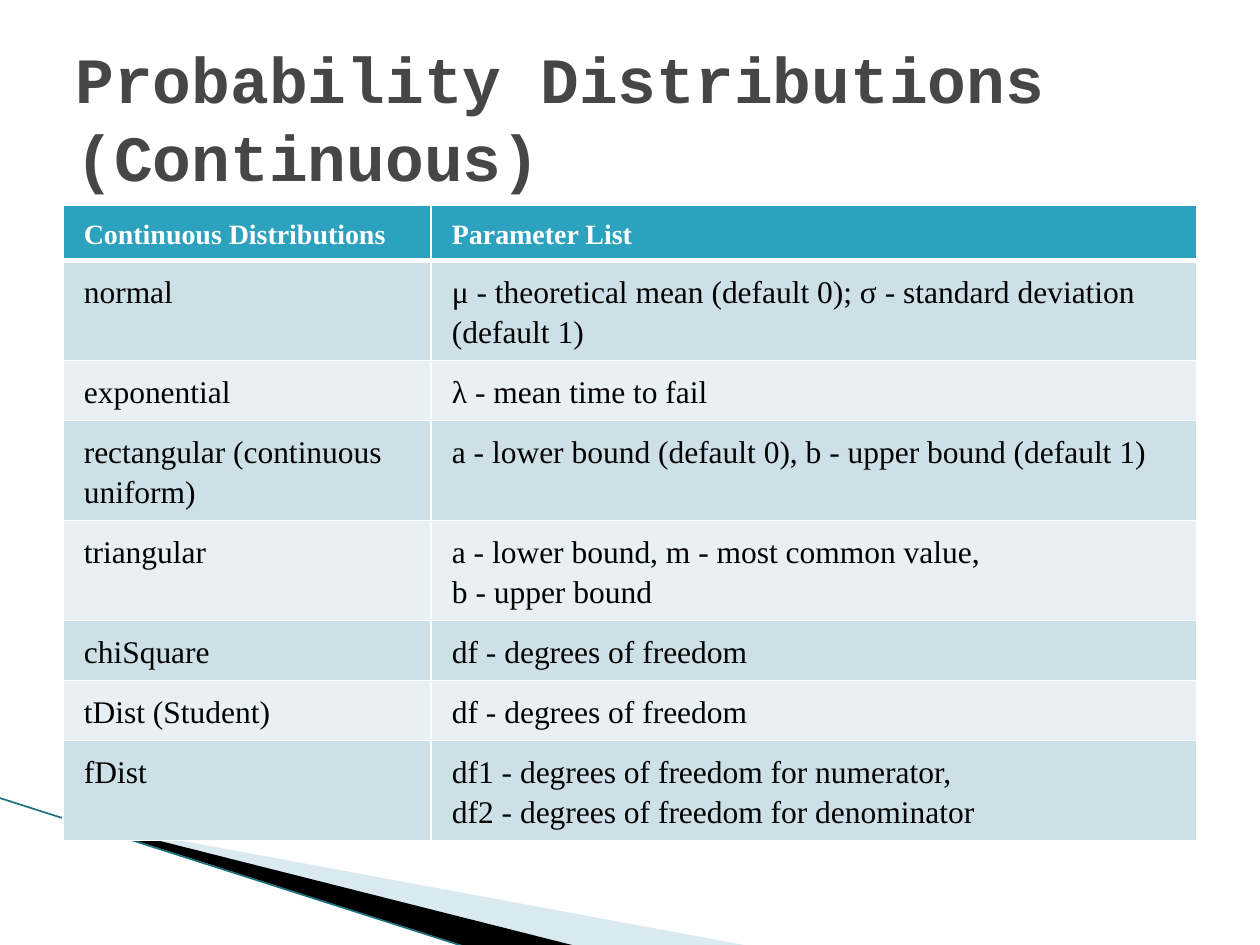
from lxml.etree import SubElement
from pptx import Presentation
from pptx.dml.color import RGBColor
from pptx.enum.shapes import MSO_CONNECTOR
from pptx.enum.text import MSO_ANCHOR
from pptx.oxml.ns import qn
from pptx.util import Cm, Pt

WHITE = RGBColor(0xFF, 0xFF, 0xFF)
BLACK = RGBColor(0, 0, 0)
GREY = RGBColor(0x46, 0x46, 0x46)
TEAL = RGBColor(0x2D, 0xA2, 0xBF)
DARK_TEAL = RGBColor(0x1B, 0x70, 0x82)
PALE_BLUE = RGBColor(0xA0, 0xCB, 0xDC)
BANDS = (RGBColor(0xCD, 0xE0, 0xE8), RGBColor(0xE8, 0xF0, 0xF4))

TITLE = dict(name="Courier New", size=Pt(36.9), bold=True)
HEADER = dict(name="Times New Roman", size=Pt(16), bold=True)
BODY = dict(name="Times New Roman", size=Pt(18), bold=False)
MARGINS = dict(margin_left=Cm(0.42), margin_right=Cm(0.42),
               margin_top=Cm(0.2), margin_bottom=Cm(0.2))

ROWS = [
    ("Continuous Distributions", "Parameter List"),
    ("normal", "μ - theoretical mean (default 0); σ - standard deviation (default 1)"),
    ("exponential", "λ - mean time to fail"),
    ("rectangular (continuous uniform)",
     "a - lower bound (default 0), b - upper bound (default 1)"),
    ("triangular", "a - lower bound, m - most common value,\nb - upper bound"),
    ("chiSquare", "df - degrees of freedom"),
    ("tDist (Student)", "df - degrees of freedom"),
    ("fDist", "df1 - degrees of freedom for numerator,\n"
              "df2 - degrees of freedom for denominator"),
]


def set_attrs(obj, values):
    for key, value in values.items():
        setattr(obj, key, value)


class SlideBuilder:
    def __init__(self, slide):
        self.s = slide

    def text(self, tf, text, style, color, spacing=None):
        tf.text = text
        for p in tf.paragraphs:
            p.line_spacing = spacing
            for r in p.runs:
                set_attrs(r.font, style)
                r.font.color.rgb = color

    def title(self, text, x, y, w, h):
        tf = self.s.shapes.add_textbox(Cm(x), Cm(y), Cm(w), Cm(h)).text_frame
        set_attrs(tf, dict(word_wrap=True, vertical_anchor=MSO_ANCHOR.MIDDLE))
        self.text(tf, text, TITLE, GREY)

    def wedge(self, points, color, opacity=100):
        start, *rest = [(Cm(x), Cm(y)) for x, y in points]
        fb = self.s.shapes.build_freeform(*start)
        fb.add_line_segments(rest, close=True)
        sp = fb.convert_to_shape()
        sp.shadow.inherit = False
        sp.line.fill.background()
        sp.fill.solid()
        sp.fill.fore_color.rgb = color
        if opacity < 100:
            clr = sp.fill._xPr.find(".//" + qn("a:srgbClr"))
            SubElement(clr, qn("a:alpha"), val=str(opacity * 1000))

    def line(self, x1, y1, x2, y2, color, width):
        cxn = self.s.shapes.add_connector(
            MSO_CONNECTOR.STRAIGHT, Cm(x1), Cm(y1), Cm(x2), Cm(y2))
        cxn.line.color.rgb = color
        cxn.line.width = Pt(width)
        SubElement(cxn._element.spPr, qn("a:effectLst"))

    def borders(self, cell, widths):
        tcPr = cell._tc.get_or_add_tcPr()
        for i, (side, width) in enumerate(widths.items()):
            ln = tcPr.makeelement(qn("a:ln" + side), {"w": str(Pt(width))})
            fill = SubElement(ln, qn("a:solidFill"))
            SubElement(fill, qn("a:srgbClr"), val=str(WHITE))
            tcPr.insert(i, ln)

    def table(self, rows, x, y, widths, row_height):
        tbl = self.s.shapes.add_table(
            len(rows), len(widths), Cm(x), Cm(y),
            Cm(sum(widths)), Cm(row_height * len(rows))).table
        for col, width in zip(tbl.columns, widths):
            col.width = Cm(width)
        for i, row in enumerate(rows):
            header = i == 0
            for j, text in enumerate(row):
                cell = tbl.cell(i, j)
                set_attrs(cell, MARGINS)
                self.text(cell.text_frame, text, HEADER if header else BODY,
                          WHITE if header else BLACK, 1.15)
                cell.fill.solid()
                cell.fill.fore_color.rgb = TEAL if header else BANDS[(i - 1) % 2]
                self.borders(cell, dict(L=1, R=1, T=3 if i == 1 else 1,
                                        B=3 if header else 1))


def main():
    prs = Presentation()
    prs.slide_width, prs.slide_height = Cm(25.4), Cm(19.05)
    b = SlideBuilder(prs.slides.add_slide(prs.slide_layouts[6]))

    # Corner decoration
    b.wedge([(1.4, 16.53), (15.11, 19.07), (11.58, 19.07), (1.4, 16.51)],
            PALE_BLUE, opacity=40)
    b.wedge([(1.35, 16.48), (11.61, 19.07), (9.45, 19.1), (1.37, 16.51)], BLACK)
    b.line(-0.03, 16.08, 9.42, 19.1, DARK_TEAL, 0.95)

    # Distribution table
    b.table(ROWS, 1.27, 4.13, (7.42, 15.44), 1.04)

    # Title
    b.title("Probability Distributions (Continuous)", 1.27, 0.76, 22.86, 3.18)

    prs.save("out.pptx")


if __name__ == "__main__":
    main()
